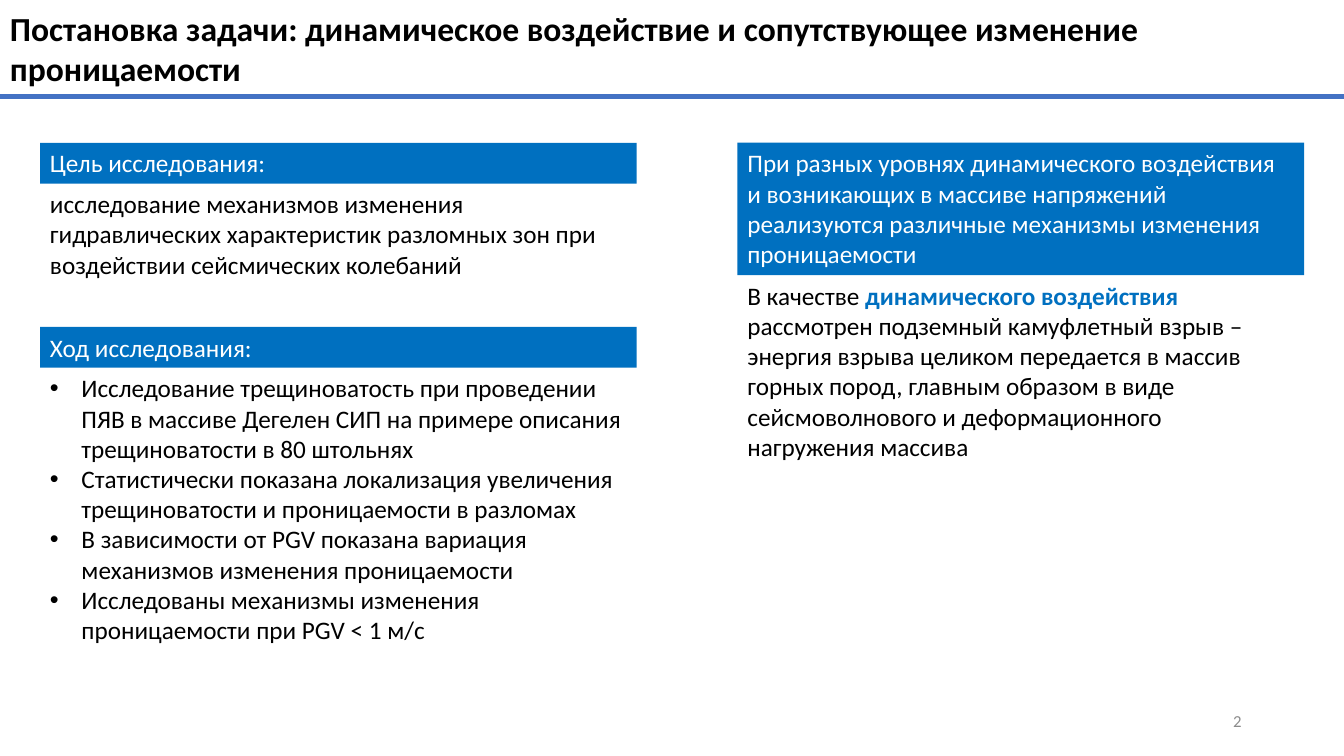
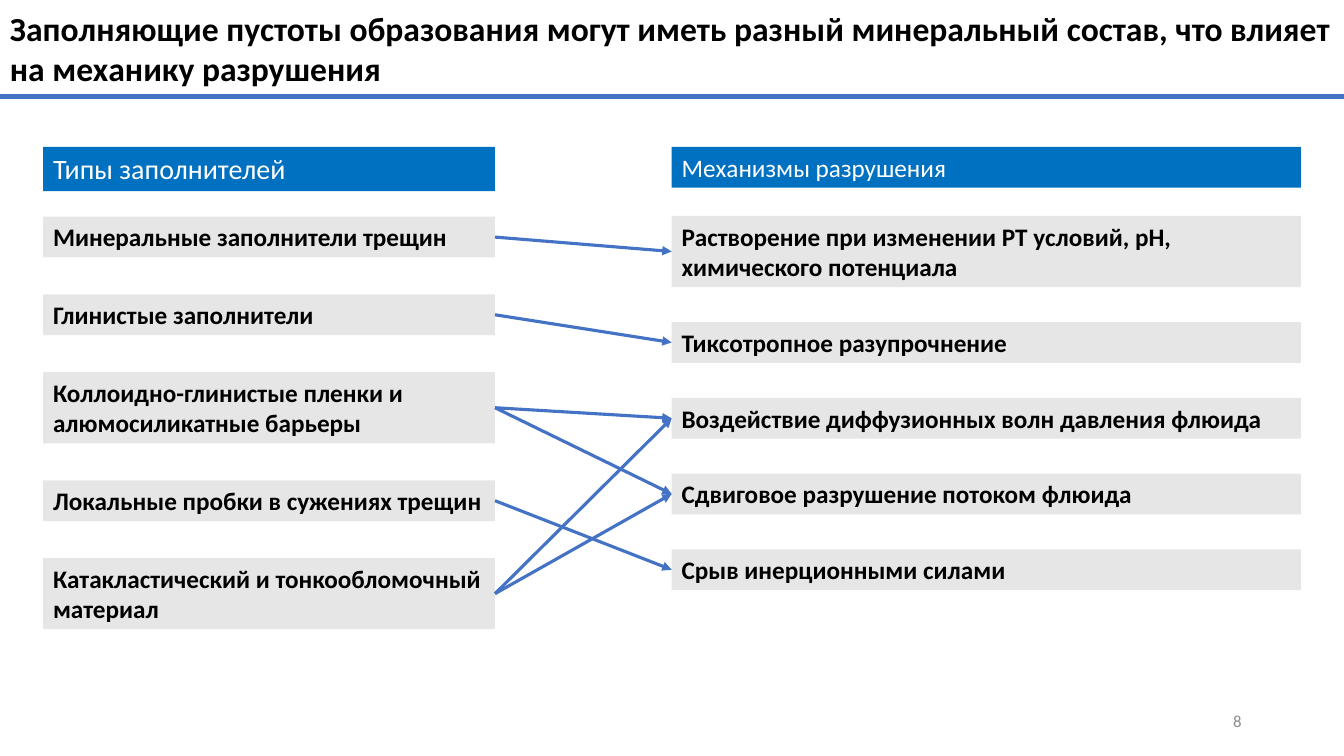
"""Build two slides on dynamic impact and permeability of fault zones."""
from lxml.etree import SubElement
from pptx import Presentation
from pptx.dml.color import RGBColor
from pptx.enum.shapes import MSO_CONNECTOR, MSO_SHAPE
from pptx.enum.text import MSO_ANCHOR, MSO_AUTO_SIZE, PP_ALIGN
from pptx.oxml.ns import qn
from pptx.util import Pt

PAGE_WIDTH, PAGE_HEIGHT = 960, 540
TITLE_HEIGHT = 69
BLACK, WHITE, GRAY = "000000", "FFFFFF", "8C8C8C"
BLUE, PALE, LINE = "0070C0", "E7E6E6", "4472C4"
ROW_HEIGHTS = {1: 29.1, 2: 50.9}

TITLE = {"size": 24, "color": BLACK, "bold": True}
BODY = {"size": 18, "color": BLACK, "bold": False}
STRONG = {"size": 18, "color": BLUE, "bold": True}
HEADER = {"size": 18, "color": WHITE, "bold": False}
LARGE_HEADER = HEADER | {"size": 20}
ROW = {"size": 18, "color": BLACK, "bold": True}
NUMBER = {"size": 12, "color": GRAY, "bold": False}


def rgb(value):
    """Turn a hex string into a colour."""
    return RGBColor.from_string(value)


def points(*values):
    """Convert numbers to point lengths."""
    return [Pt(value) for value in values]


def add_span(para, text, style):
    """Add one run in the given style."""
    span = para.add_run()
    span.text = text
    span.font.color.rgb = rgb(style["color"])
    values = {"name": "Calibri", "size": Pt(style["size"]), "bold": style["bold"]}
    for name, value in values.items():
        setattr(span.font, name, value)


def add_bullet(para):
    """Give a paragraph a hanging round bullet."""
    properties = para._p.get_or_add_pPr()
    properties.set("marL", str(Pt(22.5)))
    properties.set("indent", str(-Pt(22.5)))
    SubElement(properties, qn("a:buFont")).set("typeface", "Arial")
    SubElement(properties, qn("a:buChar")).set("char", "•")


def fill_text(box, paragraphs, bullets=False, align=PP_ALIGN.LEFT, **frame_values):
    """Write paragraphs, each a list of (text, style) spans, into a box."""
    frame = box.text_frame
    values = {"word_wrap": True, "vertical_anchor": MSO_ANCHOR.TOP,
              "auto_size": MSO_AUTO_SIZE.SHAPE_TO_FIT_TEXT} | frame_values
    for name, value in values.items():
        setattr(frame, name, value)
    for index, spans in enumerate(paragraphs):
        para = frame.add_paragraph() if index else frame.paragraphs[0]
        para.alignment = align
        if bullets:
            add_bullet(para)
        for text, style in spans:
            add_span(para, text, style)


def add_text(page, place, paragraphs, **options):
    """Add a plain text box."""
    fill_text(page.shapes.add_textbox(*points(*place)), paragraphs, **options)


def add_bar(page, place, text, fill, style):
    """Add a filled rectangle with text."""
    bar = page.shapes.add_shape(MSO_SHAPE.RECTANGLE, *points(*place))
    bar.shadow.inherit = False
    bar.fill.solid()
    bar.fill.fore_color.rgb = rgb(fill)
    bar.line.fill.background()
    fill_text(bar, [[(text, style)]])
    return bar


def add_line(page, ends, width):
    """Add a straight line without shadow."""
    line = page.shapes.add_connector(MSO_CONNECTOR.STRAIGHT, *points(*ends))
    line.line.color.rgb = rgb(LINE)
    line.line.width = Pt(width)
    SubElement(line._element.spPr, qn("a:effectLst"))
    return line


def add_arrow(page, source, target):
    """Join the right side of one bar to the left side of another."""
    arrow = add_line(page, (0, 0, 0, 0), 2.25)
    arrow.begin_connect(source, 3)
    arrow.end_connect(target, 1)
    SubElement(arrow.line._get_or_add_ln(), qn("a:tailEnd")).set("type", "triangle")


def add_rows(page, left, top, width, gap, rows):
    """Stack gray bars of (text, line count) with equal gaps."""
    bars = []
    for text, lines in rows:
        height = ROW_HEIGHTS[lines]
        bars.append(add_bar(page, (left, top, width, height), text, PALE, ROW))
        top += height + gap
    return bars


def add_page(deck, title, number):
    """Add a blank page with title, rule and page number."""
    page = deck.slides.add_slide(deck.slide_layouts[6])
    fixed = {"vertical_anchor": MSO_ANCHOR.MIDDLE, "auto_size": MSO_AUTO_SIZE.NONE}
    add_line(page, (0, TITLE_HEIGHT, PAGE_WIDTH, TITLE_HEIGHT), 3)
    add_text(page, (0, 0, PAGE_WIDTH, TITLE_HEIGHT), [[(title, TITLE)]], **fixed)
    add_text(page, (678, 500.5, 216, 28.8), [[(str(number), NUMBER)]],
             align=PP_ALIGN.RIGHT, **fixed)
    return page


def build_problem(deck):
    """Build the problem statement page."""
    page = add_page(deck, "Постановка задачи: динамическое воздействие и "
                    "сопутствующее изменение проницаемости", 2)
    left, left_width, right, right_width = 28.6, 426.2, 526.8, 404.8
    headers = [
        (left, 102, left_width, 29.1, "Цель исследования:"),
        (left, 233.5, left_width, 29.1, "Ход исследования:"),
        (right, 102, right_width, 94.5,
         "При разных уровнях динамического воздействия и возникающих в массиве "
         "напряжений реализуются различные механизмы изменения проницаемости"),
    ]
    for *place, text in headers:
        add_bar(page, place, text, BLUE, HEADER)
    add_text(page, (left, 131.1, left_width, 72.7), [[
        ("исследование механизмов изменения гидравлических характеристик "
         "разломных зон при воздействии сейсмических колебаний", BODY)]])
    steps = [
        "Исследование трещиноватость при проведении ПЯВ в массиве Дегелен СИП "
        "на примере описания трещиноватости в 80 штольнях",
        "Статистически показана локализация увеличения трещиноватости и "
        "проницаемости в разломах",
        "В зависимости от PGV показана вариация механизмов изменения проницаемости",
        "Исследованы механизмы изменения проницаемости при PGV < 1 м/с",
    ]
    add_text(page, (left, 262.6, left_width, 203.8),
             [[(step, BODY)] for step in steps], bullets=True)
    add_text(page, (right, 196.5, right_width, 138.2), [[
        ("В качестве ", BODY),
        ("динамического воздействия ", STRONG),
        ("рассмотрен подземный камуфлетный взрыв – энергия взрыва целиком "
         "передается в массив горных пород, главным образом в виде "
         "сейсмоволнового и деформационного нагружения массива", BODY)]])


def build_mechanisms(deck):
    """Build the page linking fillers to failure mechanisms."""
    page = add_page(deck, "Заполняющие пустоты образования могут иметь разный "
                    "минеральный состав, что влияет на механику разрушения", 8)
    left, left_width, right, right_width = 30.8, 322.8, 479.8, 449.4
    add_bar(page, (left, 105, left_width, 31.5), "Типы заполнителей", BLUE, LARGE_HEADER)
    add_bar(page, (right, 105, right_width, 29.1), "Механизмы разрушения", BLUE, HEADER)
    fillers = add_rows(page, left, 154.8, left_width, 26.4, [
        ("Минеральные заполнители трещин", 1),
        ("Глинистые заполнители", 1),
        ("Коллоидно-глинистые пленки и алюмосиликатные барьеры", 2),
        ("Локальные пробки в сужениях трещин", 1),
        ("Катакластический и тонкообломочный материал", 2),
    ])
    mechanisms = add_rows(page, right, 154.2, right_width, 25, [
        ("Растворение при изменении PT условий, pH, химического потенциала", 2),
        ("Тиксотропное разупрочнение", 1),
        ("Воздействие диффузионных волн давления флюида", 1),
        ("Сдвиговое разрушение потоком флюида", 1),
        ("Срыв инерционными силами", 1),
    ])
    links = [(0, 0), (1, 1), (2, 2), (3, 4), (2, 3), (4, 3), (4, 2)]
    for filler, mechanism in links:
        add_arrow(page, fillers[filler], mechanisms[mechanism])


def main():
    """Build and save the deck."""
    deck = Presentation()
    deck.slide_width, deck.slide_height = points(PAGE_WIDTH, PAGE_HEIGHT)
    build_problem(deck)
    build_mechanisms(deck)
    deck.save("out.pptx")


if __name__ == "__main__":
    main()
